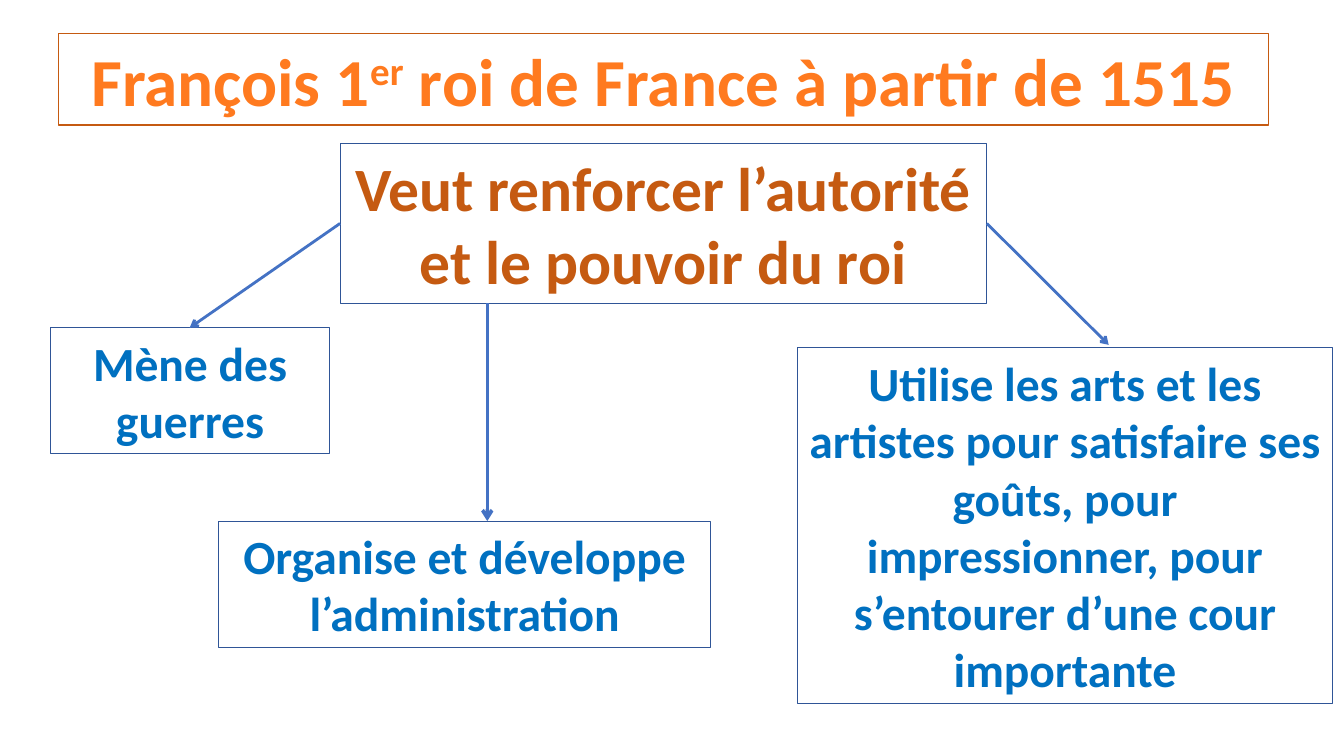
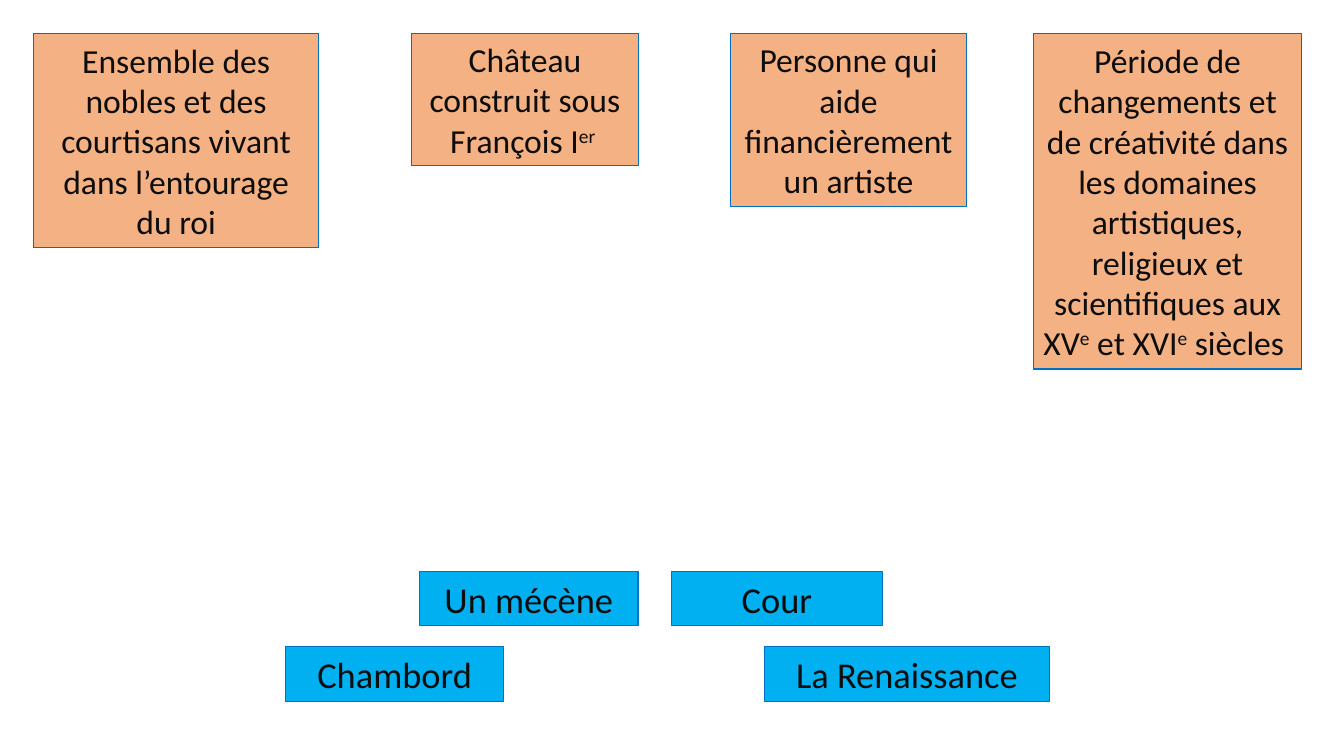
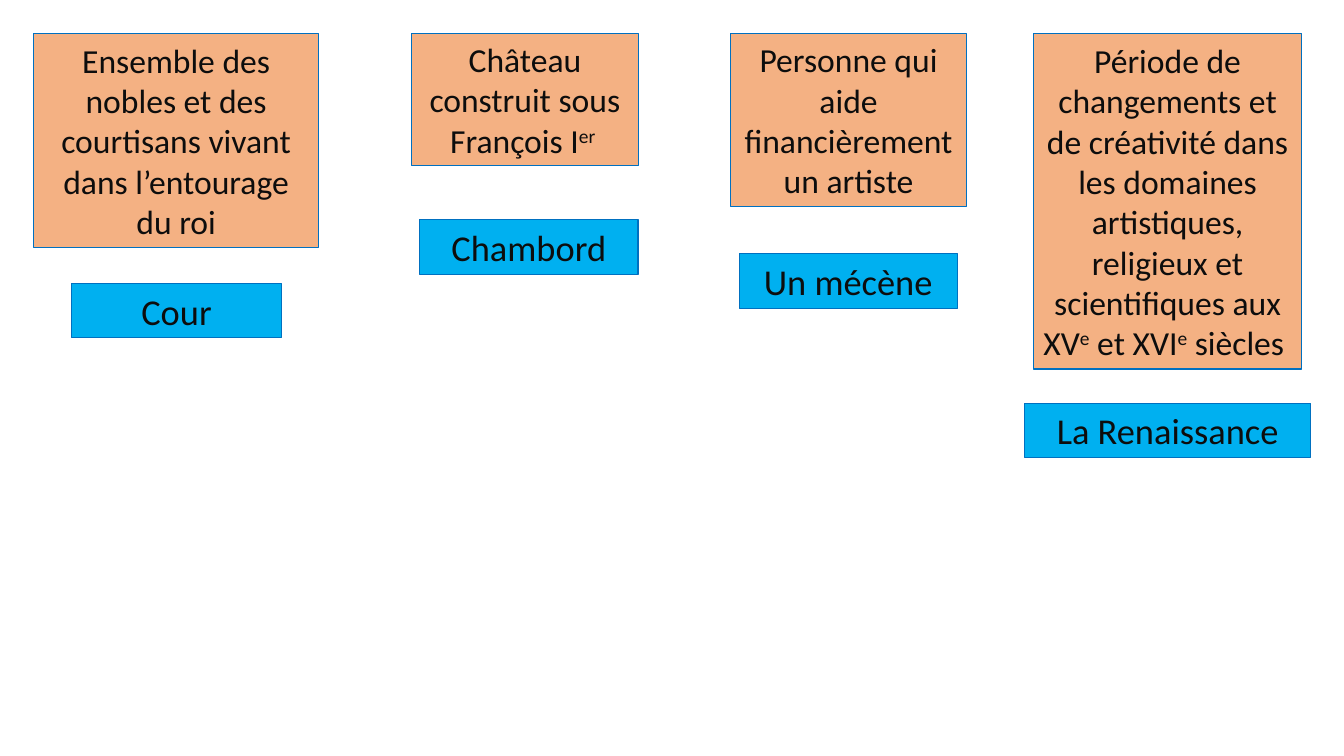
from lxml import etree
from pptx import Presentation
from pptx.dml.color import RGBColor
from pptx.enum.shapes import MSO_CONNECTOR
from pptx.enum.text import MSO_ANCHOR, MSO_AUTO_SIZE, PP_ALIGN
from pptx.oxml.ns import qn
from pptx.util import Cm, Pt

STRAIGHT = MSO_CONNECTOR.STRAIGHT
MIDDLE = MSO_ANCHOR.MIDDLE
FIT_TEXT = MSO_AUTO_SIZE.SHAPE_TO_FIT_TEXT
CENTER = PP_ALIGN.CENTER

FONT = "Calibri"
ORANGE = RGBColor(0xFF, 0x7A, 0x1F)
RUST = RGBColor(0xC5, 0x5A, 0x11)
BLUE = RGBColor(0x00, 0x70, 0xC0)
NAVY = RGBColor(0x2F, 0x55, 0x97)
ARROW_BLUE = RGBColor(0x44, 0x72, 0xC4)
PEACH = RGBColor(0xF4, 0xB1, 0x83)
SKY = RGBColor(0x00, 0xB0, 0xF0)
INK = RGBColor(0x0D, 0x0D, 0x0D)

TITLE_LAYOUT, BLANK_LAYOUT = 5, 6

# Lengths are in centimetres; places are left, top, width, height.
# In a text, every second piece is superscript.
TITLE = ("François 1", "er", " roi de France à partir de 1515")
TITLE_PLACE = (1.48, 0.84, 30.48, 2.31)
GOAL = ("Veut renforcer l’autorité et le pouvoir du roi",)
GOAL_PLACE = (8.57, 3.62, 16.3, 4.02)

# text, place, arrow start, arrow tip, arrow width in points
goal_left, goal_top, goal_width, goal_height = GOAL_PLACE
goal_middle = goal_top + goal_height / 2
MEANS = [
    (("Mène des guerres",), (1.27, 8.26, 7.04, 3.18),
     (goal_left, goal_middle), (4.78, 8.26), 2),
    (("Organise et développe l’administration",), (5.51, 13.13, 12.4, 3.18),
     (12.28, goal_top + goal_height), (12.28, 13.13), 2.5),
    (("Utilise les arts et les artistes pour satisfaire ses goûts, pour "
      "impressionner, pour s’entourer d’une cour importante",),
     (20.11, 8.76, 13.46, 8.97),
     (goal_left + goal_width, goal_middle), (27.94, 8.69), 2),
]

DEFINITION_TOP = 0.84
TERM_HEIGHT = 1.37
# definition, (left, width, height), term, term width, shuffled spot, matched spot
VOCABULARY = [
    (("Ensemble des nobles et des courtisans vivant dans l’entourage du roi",),
     (0.84, 7.2, 5.39), "Cour", 5.3, (16.93, 14.4), (1.8, 7.14)),
    (("Château construit sous François I", "er "),
     (10.37, 5.72, 3.33), "Chambord", 5.5, (7.2, 16.3), (10.58, 5.54)),
    (("Personne qui aide financièrement un artiste",),
     (18.42, 5.93, 4.37), "Un mécène", 5.5, (10.58, 14.4), (18.63, 6.4)),
    (("Période de changements et de créativité dans les domaines artistiques, "
      "religieux et scientifiques aux XV", "e", " et XVI", "e", " siècles "),
     (26.04, 6.77, 8.46), "La Renaissance", 7.2, (19.26, 16.3), (25.83, 10.16)),
]


def format_box(box, place, pieces, size, color, border, fill=None, bold=False):
    box.left, box.top, box.width, box.height = map(Cm, place)
    box.line.color.rgb = border
    box.line.width = Pt(0.75)
    if fill is not None:
        box.fill.solid()
        box.fill.fore_color.rgb = fill
    frame = box.text_frame
    frame.word_wrap = True
    frame.auto_size = FIT_TEXT
    frame.vertical_anchor = MIDDLE
    paragraph = frame.paragraphs[0]
    paragraph.alignment = CENTER
    for index, piece in enumerate(pieces):
        run = paragraph.add_run()
        run.text = piece
        run.font.name = FONT
        run.font.size = Pt(size)
        run.font.bold = bold
        run.font.color.rgb = color
        if index % 2:
            run.font._element.set("baseline", "30000")


def add_box(slide, place, *style, **options):
    box = slide.shapes.add_textbox(*map(Cm, place))
    format_box(box, place, *style, **options)


def add_arrow(slide, start, tip, width):
    arrow = slide.shapes.add_connector(STRAIGHT, *map(Cm, start + tip))
    arrow.line.color.rgb = ARROW_BLUE
    arrow.line.width = Pt(width)
    etree.SubElement(arrow.line._get_or_add_ln(), qn("a:tailEnd"), type="arrow")
    etree.SubElement(arrow._element.spPr, qn("a:effectLst"))


def build_king_slide(deck):
    slide = deck.slides.add_slide(deck.slide_layouts[TITLE_LAYOUT])
    format_box(slide.shapes.title, TITLE_PLACE, TITLE, 48, ORANGE, RUST, bold=True)
    add_box(slide, GOAL_PLACE, GOAL, 44, RUST, NAVY, bold=True)
    for text, place, start, tip, width in MEANS:
        add_box(slide, place, text, 34, BLUE, NAVY, bold=True)
        add_arrow(slide, start, tip, width)


def build_vocabulary_slide(deck, matched):
    slide = deck.slides.add_slide(deck.slide_layouts[BLANK_LAYOUT])
    for definition, column, term, term_width, shuffled_spot, matched_spot in VOCABULARY:
        left, width, height = column
        add_box(slide, (left, DEFINITION_TOP, width, height),
                definition, 24, INK, BLUE, fill=PEACH)
        spot = matched_spot if matched else shuffled_spot
        add_box(slide, spot + (term_width, TERM_HEIGHT),
                (term,), 26, INK, BLUE, fill=SKY)


def main():
    deck = Presentation()
    deck.slide_width, deck.slide_height = Cm(33.87), Cm(19.05)
    build_king_slide(deck)
    for matched in (False, True):
        build_vocabulary_slide(deck, matched)
    deck.save("out.pptx")


if __name__ == "__main__":
    main()
